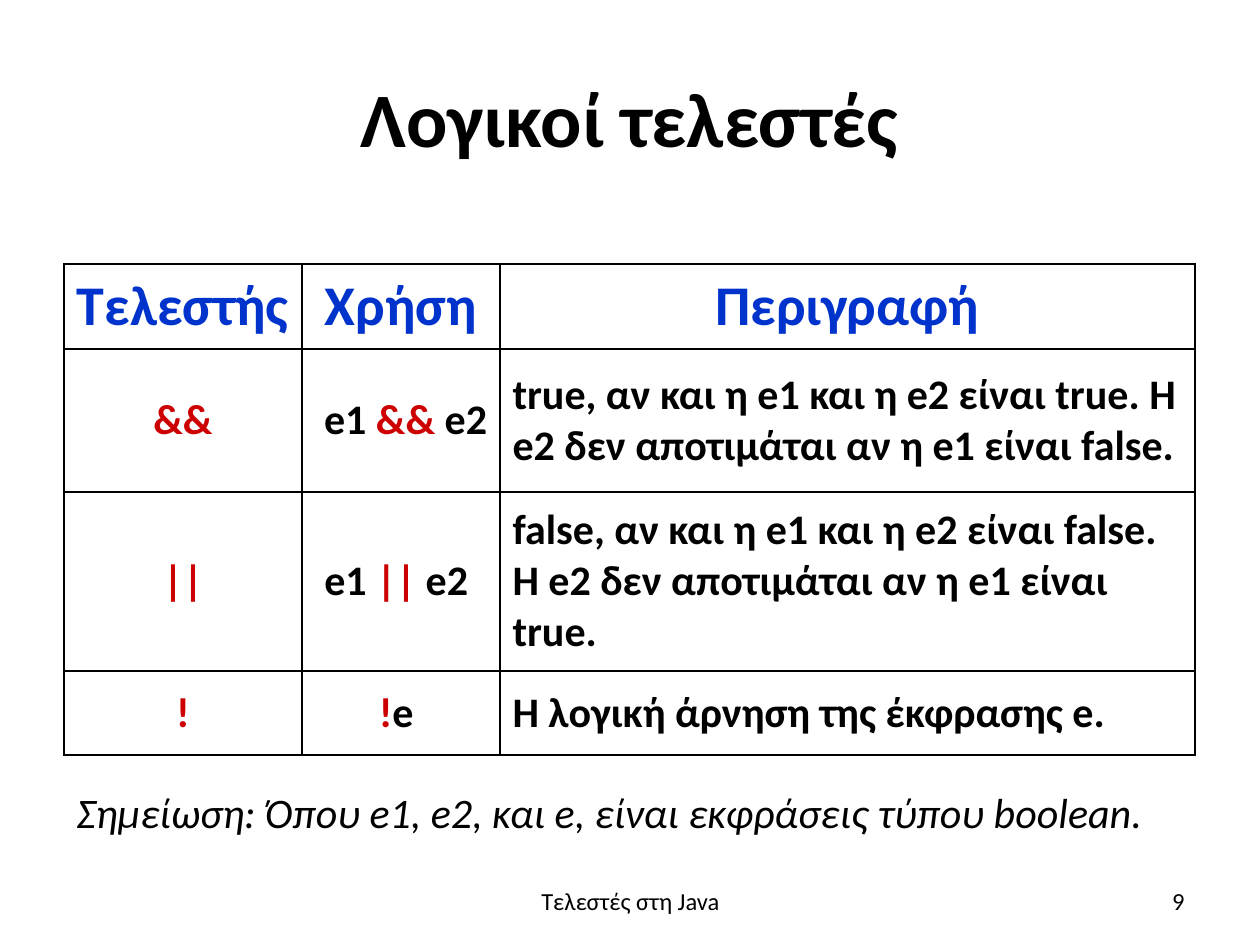
from lxml.etree import SubElement
from pptx import Presentation
from pptx.dml.color import RGBColor
from pptx.enum.text import MSO_ANCHOR, PP_ALIGN
from pptx.oxml.ns import qn
from pptx.util import Pt

EMU_PER_PX = 914400 // 126
FONT = "Calibri"
COLORS = {"text": "000000", "header": "0033CC", "operator": "CC0000", "border": "000000"}
COLUMN_WIDTHS = [238, 198, 695]
ROW_HEIGHTS = [85, 143, 179, 84]
HANGING_INDENT = 48

HEADERS = ["Τελεστής", "Χρήση", "Περιγραφή"]
OPERATORS = [
    ("&&", [(" ", "text", False), ("e1 ", "text"), ("&&", "operator"), (" e2", "text")], PP_ALIGN.LEFT,
     ["true, αν και η e1 και η e2 είναι true. Η", "e2 δεν αποτιμάται αν η e1 είναι false."]),
    ("||", [("e1 ", "text"), ("||", "operator"), (" e2 ", "text")], PP_ALIGN.CENTER,
     ["false, αν και η e1 και η e2 είναι false.", "Η e2 δεν αποτιμάται αν η e1 είναι", "true."]),
    ("!", [("!", "operator"), ("e ", "text")], PP_ALIGN.CENTER,
     ["Η λογική άρνηση της έκφρασης e."]),
]


def px(length):
    return length * EMU_PER_PX


def write_text(text_frame, lines, size=24, color="text", bold=False, italic=False,
               align=PP_ALIGN.LEFT, hanging=0):
    for index, line in enumerate(lines):
        paragraph = text_frame.paragraphs[0] if index == 0 else text_frame.add_paragraph()
        paragraph.alignment = align
        if hanging:
            properties = paragraph._p.get_or_add_pPr()
            properties.set("marL", str(px(hanging)))
            properties.set("indent", str(-px(hanging)))
        pieces = [(line, color)] if isinstance(line, str) else line
        for text, run_color, *weight in pieces:
            run = paragraph.add_run()
            run.text = text
            run.font.name = FONT
            run.font.size = Pt(size)
            run.font.bold = weight[0] if weight else bold
            run.font.italic = italic
            run.font.color.rgb = RGBColor.from_string(COLORS[run_color])


def add_text_box(slide, left, top, width, height, text, anchor=MSO_ANCHOR.MIDDLE, **text_format):
    text_frame = slide.shapes.add_textbox(px(left), px(top), px(width), px(height)).text_frame
    text_frame.word_wrap = True
    text_frame.vertical_anchor = anchor
    write_text(text_frame, [text], **text_format)


def add_borders(cell):
    properties = cell._tc.get_or_add_tcPr()
    for side in ("lnL", "lnR", "lnT", "lnB"):
        line = SubElement(properties, qn(f"a:{side}"), w=str(Pt(1)))
        fill = SubElement(line, qn("a:solidFill"))
        SubElement(fill, qn("a:srgbClr"), val=COLORS["border"])


def fill_cell(cell, lines, align=PP_ALIGN.CENTER, **text_format):
    cell.vertical_anchor = MSO_ANCHOR.MIDDLE
    if align == PP_ALIGN.LEFT:
        cell.margin_right = px(8)
    add_borders(cell)
    cell.fill.background()
    write_text(cell.text_frame, lines, bold=True, align=align, hanging=HANGING_INDENT, **text_format)


def add_operator_table(slide, left, top):
    table = slide.shapes.add_table(
        len(ROW_HEIGHTS), len(COLUMN_WIDTHS), px(left), px(top),
        px(sum(COLUMN_WIDTHS)), px(sum(ROW_HEIGHTS))).table
    table.first_row = False
    table.horz_banding = False
    for column, width in zip(table.columns, COLUMN_WIDTHS):
        column.width = px(width)
    for row, height in zip(table.rows, ROW_HEIGHTS):
        row.height = px(height)
    for index, header in enumerate(HEADERS):
        fill_cell(table.cell(0, index), [header], size=32, color="header")
    for index, (operator, usage, usage_align, description) in enumerate(OPERATORS, start=1):
        fill_cell(table.cell(index, 0), [operator], color="operator")
        fill_cell(table.cell(index, 1), [usage], align=usage_align)
        fill_cell(table.cell(index, 2), description, align=PP_ALIGN.LEFT)


def main():
    presentation = Presentation()
    presentation.slide_width = px(1260)
    presentation.slide_height = px(945)
    slide = presentation.slides.add_slide(presentation.slide_layouts[6])
    add_text_box(slide, 63, 38, 1134, 157, "Λογικοί τελεστές",
                 size=44, bold=True, align=PP_ALIGN.CENTER)
    add_operator_table(slide, 64, 264)
    add_text_box(slide, 64, 780, 1131, 63,
                 "Σημείωση: Όπου e1, e2, και e, είναι εκφράσεις τύπου boolean.",
                 anchor=MSO_ANCHOR.TOP, italic=True)
    add_text_box(slide, 431, 876, 399, 50, "Τελεστές στη Java", size=14, align=PP_ALIGN.CENTER)
    add_text_box(slide, 903, 876, 294, 50, "9", size=14, align=PP_ALIGN.RIGHT)
    presentation.save("out.pptx")


if __name__ == "__main__":
    main()
